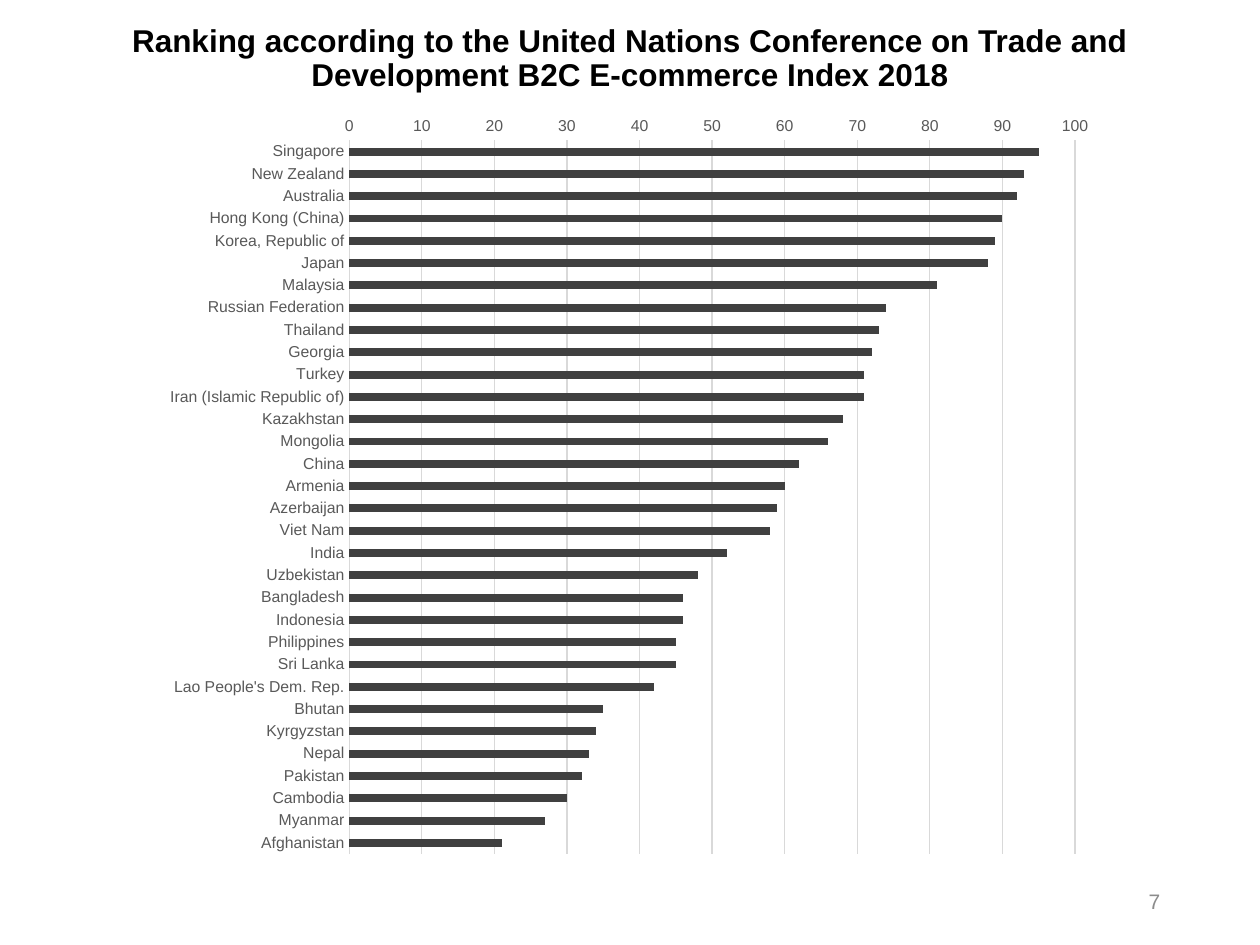
from pptx import Presentation
from pptx import util as u
from pptx.chart.data import CategoryChartData
from pptx.dml.color import RGBColor
from pptx.enum import chart as ch, text
from pptx.oxml import parse_xml
from pptx.oxml.ns import nsdecls

COLORS = {"title": "000000", "number": "8C8C8C", "label": "595959",
          "grid": "D9D9D9", "bar": "404040"}

RANKING = [
    ("Singapore", 95), ("New Zealand", 93), ("Australia", 92),
    ("Hong Kong (China)", 90), ("Korea, Republic of", 89), ("Japan", 88),
    ("Malaysia", 81), ("Russian Federation", 74), ("Thailand", 73),
    ("Georgia", 72), ("Turkey", 71), ("Iran (Islamic Republic of)", 71),
    ("Kazakhstan", 68), ("Mongolia", 66), ("China", 62), ("Armenia", 60),
    ("Azerbaijan", 59), ("Viet Nam", 58), ("India", 52), ("Uzbekistan", 48),
    ("Bangladesh", 46), ("Indonesia", 46), ("Philippines", 45),
    ("Sri Lanka", 45), ("Lao People's Dem. Rep.", 42), ("Bhutan", 35),
    ("Kyrgyzstan", 34), ("Nepal", 33), ("Pakistan", 32), ("Cambodia", 30),
    ("Myanmar", 27), ("Afghanistan", 21),
]


class Deck:
    font = "Arial"

    def __init__(self, width, height):
        self.prs = Presentation()
        self.prs.slide_width, self.prs.slide_height = u.Cm(width), u.Cm(height)
        self.s = self.prs.slides.add_slide(self.prs.slide_layouts[6])

    def style(self, font, size, color, bold=False):
        font.name, font.size, font.bold = self.font, u.Pt(size), bold
        font.color.rgb = RGBColor.from_string(COLORS[color])

    def text(self, box, words, size, color, align, bold=False, spacing=1.0):
        tf = self.s.shapes.add_textbox(*map(u.Cm, box)).text_frame
        tf.word_wrap = True
        tf.vertical_anchor = text.MSO_ANCHOR.MIDDLE
        tf.text = words
        p = tf.paragraphs[0]
        p.alignment, p.line_spacing = align, spacing
        for r in p.runs:
            self.style(r.font, size, color, bold)

    def line(self, line, color):
        line.color.rgb = RGBColor.from_string(COLORS[color])
        line.width = u.Pt(0.75)

    def bar_chart(self, box, rows, plot):
        data = CategoryChartData()
        data.categories = [name for name, _ in rows]
        data.add_series("Series 1", [value for _, value in rows])
        chart = self.s.shapes.add_chart(
            ch.XL_CHART_TYPE.BAR_CLUSTERED, *map(u.Cm, box), data).chart
        chart.has_legend = chart.has_title = False
        self.style(chart.font, 10, "title")

        # Bars
        bars = chart.plots[0]
        bars.gap_width, bars.vary_by_categories = 182, False
        fill = bars.series[0].format.fill
        fill.solid()
        fill.fore_color.rgb = RGBColor.from_string(COLORS["bar"])

        # Axes: first country on top, scale above the bars
        cat, val = chart.category_axis, chart.value_axis
        for axis in (cat, val):
            axis.major_tick_mark = axis.minor_tick_mark = ch.XL_TICK_MARK.NONE
            self.style(axis.tick_labels.font, 9, "label")
        cat.reverse_order = True
        self.line(cat.format.line, "grid")
        val.minimum_scale, val.maximum_scale, val.major_unit = 0, 100, 10
        val.format.line.fill.background()
        self.line(val.major_gridlines.format.line, "grid")

        # Inner plot area, as fractions of the chart
        sizes = "".join(f'<c:{k} val="{v}"/>' for k, v in zip("xywh", plot))
        layout = parse_xml(
            f'<c:layout {nsdecls("c")}><c:manualLayout>'
            '<c:layoutTarget val="inner"/><c:xMode val="edge"/>'
            f'<c:yMode val="edge"/>{sizes}</c:manualLayout></c:layout>')
        area = chart.element.find(".//{*}plotArea")
        for old in area.findall("{*}layout"):
            area.remove(old)
        area.insert(0, layout)


def main():
    deck = Deck(25.4, 19.05)
    # Title
    deck.text((1.75, 0.28, 21.9, 1.85),
              "Ranking according to the United Nations Conference on Trade and\v"
              "Development B2C E-commerce Index 2018",
              18, "title", text.PP_ALIGN.CENTER, bold=True, spacing=0.9)
    # Ranking chart
    deck.bar_chart((3, 2.06, 19.25, 15.47), RANKING, (0.21, 0.05, 0.76, 0.93))
    # Slide number
    deck.text((21.46, 17.65, 2.18, 1.02), "7", 12, "number",
              text.PP_ALIGN.RIGHT)
    deck.prs.save("out.pptx")


if __name__ == "__main__":
    main()
